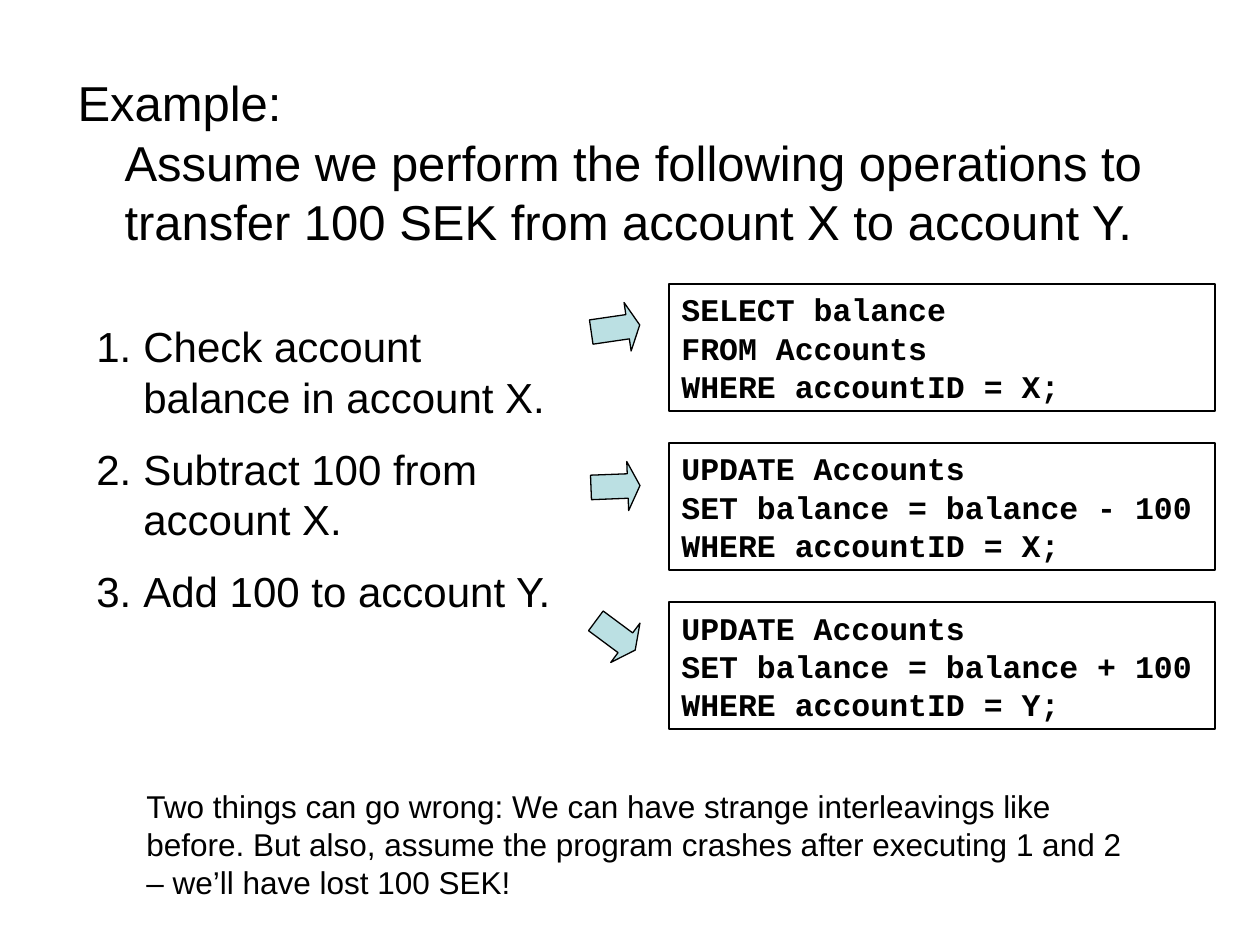
from lxml import etree
from pptx import Presentation, util as u
from pptx.dml.color import RGBColor
from pptx.enum import shapes, text
from pptx.oxml.ns import qn

COLORS = {"ink": "000000", "arrow": "BBE0E3"}
INTRO = ["Example:",
         "Assume we perform the following operations to "
         "transfer 100 SEK from account X to account Y."]
STEPS = ["Check account balance in account X.",
         "Subtract 100 from account X.",
         "Add 100 to account Y."]
QUERIES = [
    ["SELECT balance", "FROM Accounts", "WHERE accountID = X;"],
    ["UPDATE Accounts", "SET balance = balance - 100", "WHERE accountID = X;"],
    ["UPDATE Accounts", "SET balance = balance + 100", "WHERE accountID = Y;"],
]
ARROWS = [(304, 351.7), (462, 357.8), (611, 36.6)]  # top, rotation
NOTE = ["Two things can go wrong: We can have strange interleavings like before. "
        "But also, assume the program crashes after executing 1 and 2 "
        "– we’ll have lost 100 SEK!"]
QUERY_TOP, QUERY_PITCH = 284, 159
INDENT = 47
LINE_HEIGHT = 1.21  # line pitch relative to the font size


def px(n):
    return u.Emu(round(n * 914400 / 126))


def color(name):
    return RGBColor.from_string(COLORS[name])


def write(box, paras, size, font="Arial", bold=False, bullet=None):
    """Fill a box with paragraphs, each a list of lines; bullet names a bullet tag."""
    frame = box.text_frame
    frame.word_wrap = True
    frame.auto_size = text.MSO_AUTO_SIZE.NONE
    frame.vertical_anchor = text.MSO_ANCHOR.TOP
    for i, lines in enumerate(paras):
        para = frame.add_paragraph() if i else frame.paragraphs[0]
        para.alignment = text.PP_ALIGN.LEFT
        para.line_spacing = u.Pt(round(size * LINE_HEIGHT, 1))
        para.space_before = u.Pt(size / 2 if i else 0)
        for j, line in enumerate(lines):
            if j:
                para.add_line_break()
            span = para.add_run()
            span.text = line
            span.font.size = u.Pt(size)
            span.font.name = font
            span.font.bold = bold
            span.font.color.rgb = color("ink")
        if bullet:
            props = para._p.get_or_add_pPr()
            props.set("marL", str(px(INDENT)))
            props.set("indent", str(-px(INDENT)))
            mark = etree.SubElement(props, qn(bullet))
            if bullet == "a:buAutoNum":
                mark.set("type", "arabicPeriod")


def add_outlined(page, kind, left, top, width, height, fill=None):
    shape = page.shapes.add_shape(kind, px(left), px(top), px(width), px(height))
    shape.shadow.inherit = False
    if fill:
        shape.fill.solid()
        shape.fill.fore_color.rgb = color(fill)
    else:
        shape.fill.background()
    shape.line.color.rgb = color("ink")
    shape.line.width = u.Pt(0.75)
    return shape


def main():
    deck = Presentation()
    deck.slide_width, deck.slide_height = px(1260), px(945)
    page = deck.slides.add_slide(deck.slide_layouts[1])
    title = page.shapes.title
    title.element.getparent().remove(title.element)

    intro = page.placeholders[1]
    intro.left, intro.top, intro.width, intro.height = map(px, (65, 66, 1134, 624))
    write(intro, [INTRO], 28, bullet="a:buNone")

    steps = page.shapes.add_textbox(px(84), px(314), px(486), px(315))
    write(steps, [[step] for step in STEPS], 24, bullet="a:buAutoNum")

    for i, query in enumerate(QUERIES):
        box = add_outlined(page, shapes.MSO_SHAPE.RECTANGLE,
                           669, QUERY_TOP + i * QUERY_PITCH, 546, 127)
        write(box, [query], 18, "Courier New", bold=True)

    for top, rotation in ARROWS:
        arrow = add_outlined(page, shapes.MSO_SHAPE.RIGHT_ARROW, 591, top, 49, 49, "arrow")
        arrow.adjustments[0], arrow.adjustments[1] = 0.5, 0.25
        arrow.rotation = rotation

    note = page.shapes.add_textbox(px(134), px(780), px(1002), px(126))
    write(note, [NOTE], 18)

    deck.save("out.pptx")


if __name__ == "__main__":
    main()
